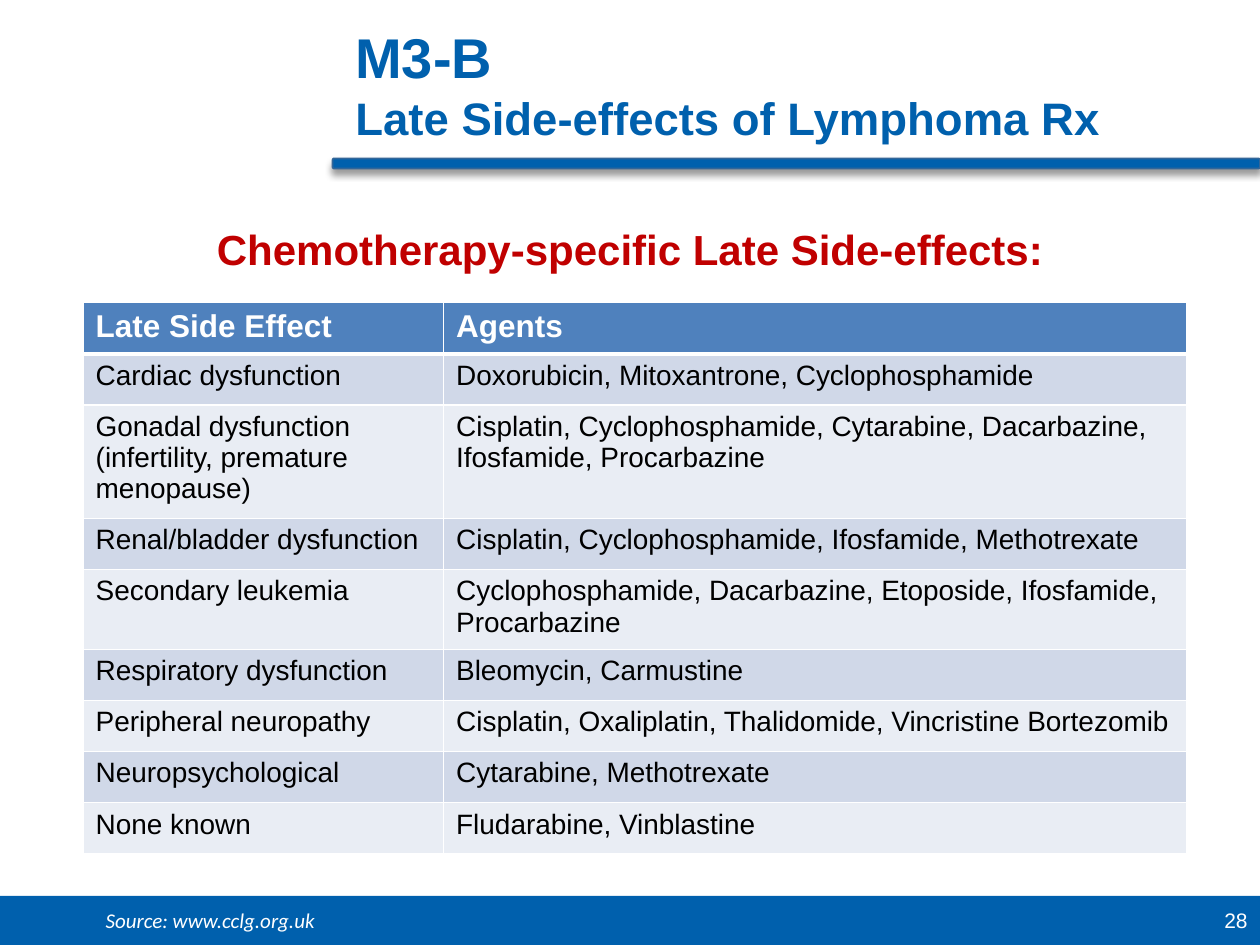
from lxml import etree
from pptx import Presentation
from pptx.dml.color import RGBColor
from pptx.enum.shapes import MSO_SHAPE
from pptx.enum.text import MSO_ANCHOR, PP_ALIGN
from pptx.oxml import parse_xml
from pptx.oxml.ns import nsdecls, qn
from pptx.util import Pt

RECT, ROUND = MSO_SHAPE.RECTANGLE, MSO_SHAPE.ROUNDED_RECTANGLE
TOP, MIDDLE = MSO_ANCHOR.TOP, MSO_ANCHOR.MIDDLE
LEFT, CENTER, RIGHT = PP_ALIGN.LEFT, PP_ALIGN.CENTER, PP_ALIGN.RIGHT

COLORS = {
    "blue": "0060AD", "rule": "336699", "red": "C00000", "white": "FFFFFF",
    "black": "000000", "header": "4F81BD", "odd": "D0D8E8", "even": "E9EDF4",
}
ROWS = [
    ("Late Side Effect", "Agents"),
    ("Cardiac dysfunction", "Doxorubicin, Mitoxantrone, Cyclophosphamide"),
    ("Gonadal dysfunction (infertility, premature menopause)",
     "Cisplatin, Cyclophosphamide, Cytarabine, Dacarbazine, Ifosfamide, Procarbazine"),
    ("Renal/bladder dysfunction", "Cisplatin, Cyclophosphamide, Ifosfamide, Methotrexate"),
    ("Secondary leukemia",
     "Cyclophosphamide, Dacarbazine, Etoposide, Ifosfamide, Procarbazine"),
    ("Respiratory dysfunction", "Bleomycin, Carmustine"),
    ("Peripheral neuropathy", "Cisplatin, Oxaliplatin, Thalidomide, Vincristine Bortezomib"),
    ("Neuropsychological", "Cytarabine, Methotrexate"),
    ("None known", "Fludarabine, Vinblastine"),
]


class Deck:
    """Style and current slide, with a method for each kind of element."""

    def __init__(self, slide, font="Arial"):
        self.s = slide
        self.font = font

    def color(self, name):
        return RGBColor.from_string(COLORS[name])

    def run(self, p, text, size, color, bold=False, italic=False, font=None):
        r = p.add_run()
        r.text = text
        r.font.name = font or self.font
        r.font.size = Pt(size)
        r.font.bold = bold
        r.font.italic = italic
        r.font.color.rgb = self.color(color)

    def bar(self, kind, box, line=None, shadow=False):
        sp = self.s.shapes.add_shape(kind, *map(Pt, box))
        sp.shadow.inherit = False
        sp.fill.solid()
        sp.fill.fore_color.rgb = self.color("blue")
        if line:
            sp.line.color.rgb = self.color(line)
            sp.line.width = Pt(1)
        else:
            sp.line.fill.background()
        if shadow:
            effects = sp.element.spPr.find(qn("a:effectLst"))
            effects.append(parse_xml(
                f'<a:outerShdw {nsdecls("a")} blurRad="{Pt(4)}" dist="{Pt(3)}" '
                f'dir="5400000" rotWithShape="0"><a:srgbClr val="{COLORS["black"]}">'
                '<a:alpha val="40000"/></a:srgbClr></a:outerShdw>'))

    def text(self, box, align=LEFT, anchor=MIDDLE):
        tf = self.s.shapes.add_textbox(*map(Pt, box)).text_frame
        tf.word_wrap = True
        tf.vertical_anchor = anchor
        p = tf.paragraphs[0]
        p.alignment = align
        return p

    def borders(self, cell, bottom):
        tcPr = cell._tc.get_or_add_tcPr()
        for i, (side, width) in enumerate(zip("LRTB", (1, 1, 1, bottom))):
            ln = etree.Element(qn(f"a:ln{side}"), w=str(Pt(width)))
            fill = etree.SubElement(ln, qn("a:solidFill"))
            etree.SubElement(fill, qn("a:srgbClr"), val=COLORS["white"])
            tcPr.insert(i, ln)

    def table(self, box, widths, row_height, rows):
        frame = self.s.shapes.add_table(len(rows), len(widths), *map(Pt, box))
        table = frame.table
        for col, width in zip(table.columns, widths):
            col.width = Pt(width)
        for i, row in enumerate(rows):
            table.rows[i].height = Pt(row_height)
            head = i == 0
            fill = "header" if head else "odd" if i % 2 else "even"
            for cell, value in zip(table.rows[i].cells, row):
                cell.fill.solid()
                cell.fill.fore_color.rgb = self.color(fill)
                self.borders(cell, 3 if head else 1)
                self.run(cell.text_frame.paragraphs[0], value, 18 if head else 16,
                         "white" if head else "black", bold=head)
        frame.height = Pt(box[3])


def main():
    prs = Presentation()
    prs.slide_width, prs.slide_height = Pt(720), Pt(540)
    deck = Deck(prs.slides.add_slide(prs.slide_layouts[6]))

    deck.bar(RECT, (0, 512, 720, 28))
    p = deck.text((552, 512, 168, 28), RIGHT)
    deck.run(p, "28", 12, "white")
    deck.bar(ROUND, (190, 90.5, 530, 5.8), line="rule", shadow=True)

    p = deck.text((196, 12.2, 529, 71.3))
    deck.run(p, "M3-B", 32, "blue", bold=True)
    p.add_line_break()
    deck.run(p, "Late Side-effects of Lymphoma Rx", 26, "blue", bold=True)

    p = deck.text((36, 124, 648, 36), CENTER)
    deck.run(p, "Chemotherapy-specific Late Side-effects:", 24, "red", bold=True)

    p = deck.text((53.3, 515, 537, 21.6), anchor=TOP)
    deck.run(p, "Source: www.cclg.org.uk", 12, "white", italic=True, font="Calibri")

    deck.table((47.5, 173, 630.7, 314.6), (206, 424.7), 29.2, ROWS)
    prs.save("out.pptx")


if __name__ == "__main__":
    main()
